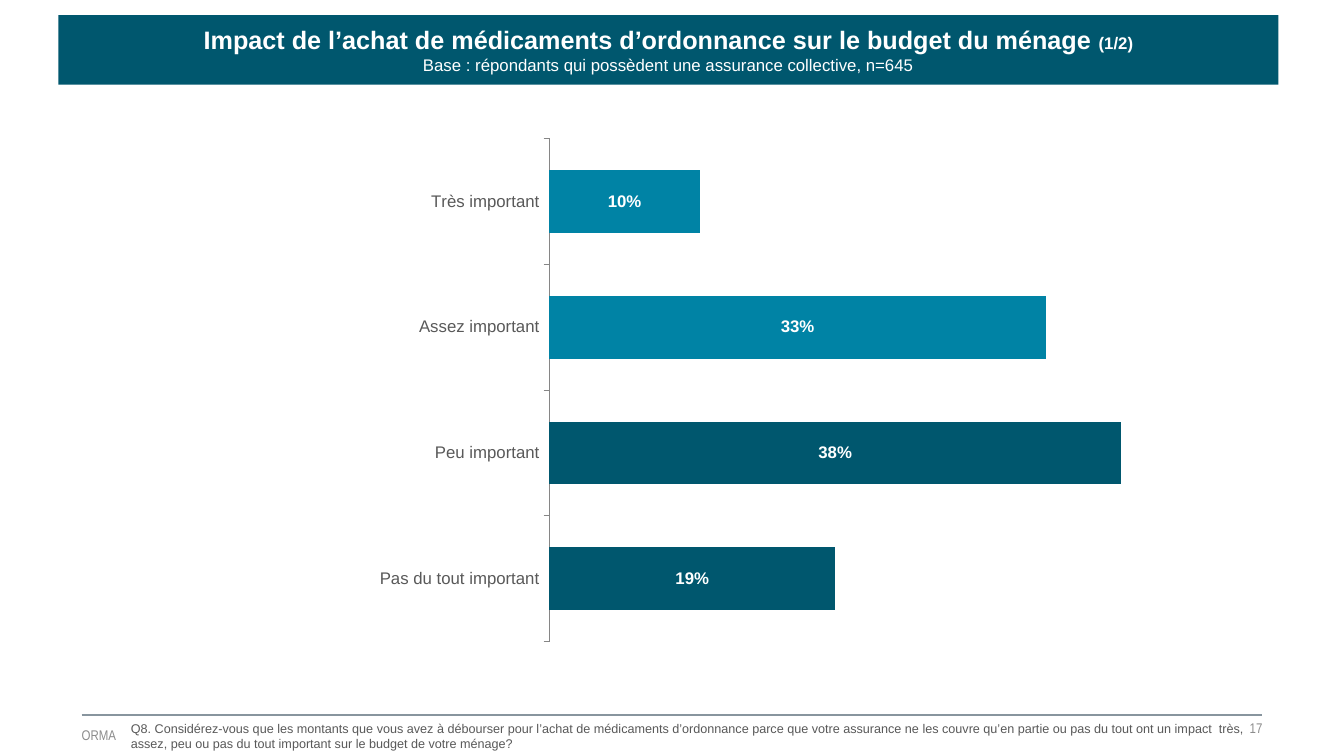
from lxml import etree
from pptx import Presentation
from pptx import util as u
from pptx.chart.data import CategoryChartData
from pptx.dml.color import RGBColor
from pptx.enum import chart as ch, shapes, text
from pptx.oxml import parse_xml
from pptx.oxml.ns import nsdecls, qn

DARK_TEAL = RGBColor(0x00, 0x57, 0x6E)
LIGHT_TEAL = RGBColor(0x00, 0x83, 0xA5)
WHITE = RGBColor(0xFF, 0xFF, 0xFF)
TEXT_GREY = RGBColor(0x59, 0x59, 0x59)
FOOTER_GREY = RGBColor(0x8C, 0x8C, 0x8C)
RULE_GREY = RGBColor(0x88, 0x95, 0x9E)
AXIS_GREY = RGBColor(0x86, 0x86, 0x86)


def format_font(font, size, color, name="Arial", bold=False):
    values = {"size": u.Pt(size), "name": name, "bold": bold}
    for attribute, value in values.items():
        setattr(font, attribute, value)
    font.color.rgb = color


def format_frame(frame, inset):
    values = {"word_wrap": True, "auto_size": text.MSO_AUTO_SIZE.NONE}
    if inset is not None:
        values["vertical_anchor"] = text.MSO_ANCHOR.MIDDLE
        for side in ("left", "top", "right", "bottom"):
            values[f"margin_{side}"] = u.Inches(inset)
    for attribute, value in values.items():
        setattr(frame, attribute, value)


presentation = Presentation()
presentation.slide_width = u.Inches(13.33)
presentation.slide_height = u.Inches(7.5)
slide = presentation.slides.add_slide(presentation.slide_layouts[5])

title = slide.shapes.title
title_place = {"left": 0.58, "top": 0.15, "width": 12.1, "height": 0.69}
for attribute, value in title_place.items():
    setattr(title, attribute, u.Inches(value))
title.fill.solid()
title.fill.fore_color.rgb = DARK_TEAL
format_frame(title.text_frame, 0)
paragraph = title.text_frame.paragraphs[0]
paragraph.alignment = text.PP_ALIGN.CENTER
title_runs = [
    ("Impact de l’achat de médicaments d’ordonnance sur le budget du ménage ", 18, True),
    ("(1/2)", 12, True),
    ("Base : répondants qui possèdent une assurance collective, n=645", 12, False),
]
for wording, size, bold in title_runs:
    if not bold:
        paragraph.add_line_break()
    run = paragraph.add_run()
    run.text = wording
    format_font(run.font, size, WHITE, bold=bold)

answers = {
    "Très important": (0.10, LIGHT_TEAL),
    "Assez important": (0.33, LIGHT_TEAL),
    "Peu important": (0.38, DARK_TEAL),
    "Pas du tout important": (0.19, DARK_TEAL),
}
chart_data = CategoryChartData(number_format="0%")
chart_data.categories = list(answers)
chart_data.add_series("Series 1", [share for share, color in answers.values()])
chart = slide.shapes.add_chart(
    ch.XL_CHART_TYPE.BAR_CLUSTERED,
    u.Inches(1.67), u.Inches(1.22), u.Inches(10.83), u.Inches(5.5), chart_data,
).chart
chart.has_legend = False
chart.has_title = False
format_font(chart.font, 12, TEXT_GREY)

category_axis = chart.category_axis
category_axis.reverse_order = True
category_axis.has_major_gridlines = False
category_axis.major_tick_mark = ch.XL_TICK_MARK.OUTSIDE
category_axis.format.line.color.rgb = AXIS_GREY
category_axis.format.line.width = u.Pt(0.75)
format_font(category_axis.tick_labels.font, 12, TEXT_GREY)

value_axis = chart.value_axis
value_axis.minimum_scale = 0
value_axis.maximum_scale = 0.4
value_axis.has_major_gridlines = False
value_axis.visible = False

plot = chart.plots[0]
plot.gap_width = 100
plot.vary_by_categories = False
series = plot.series[0]
series.format.fill.solid()
series.format.fill.fore_color.rgb = DARK_TEAL
for index, (share, color) in enumerate(answers.values()):
    if color != DARK_TEAL:
        fill = series.points[index].format.fill
        fill.solid()
        fill.fore_color.rgb = color
labels = series.data_labels
labels.show_value = True
labels.number_format = "0%"
labels.number_format_is_linked = False
labels.position = ch.XL_LABEL_POSITION.CENTER
format_font(labels.font, 12, WHITE, bold=True)

plot_area = chart.element.find(".//" + qn("c:plotArea"))
for layout in plot_area.findall(qn("c:layout")):
    plot_area.remove(layout)
layout = parse_xml(f"<c:layout {nsdecls('c')}><c:manualLayout/></c:layout>")
layout_values = {
    "layoutTarget": "inner", "xMode": "edge", "yMode": "edge",
    "x": 0.349, "y": 0.028, "w": 0.551, "h": 0.908,
}
for tag, value in layout_values.items():
    etree.SubElement(layout[0], qn(f"c:{tag}")).set("val", str(value))
plot_area.insert(0, layout)

footer_rule = slide.shapes.add_connector(
    shapes.MSO_CONNECTOR.STRAIGHT,
    u.Inches(0.81), u.Inches(7.09), u.Inches(12.52), u.Inches(7.09),
)
footer_rule.line.color.rgb = RULE_GREY
footer_rule.line.width = u.Pt(1.5)
etree.SubElement(footer_rule.element.spPr, qn("a:effectLst"))

question = (
    "Q8. Considérez-vous que les montants que vous avez à débourser pour l’achat de "
    "médicaments d’ordonnance parce que votre assurance ne les couvre qu’en partie ou pas "
    "du tout ont un impact  très, assez, peu ou pas du tout important sur le budget de "
    "votre ménage?"
)
left, right = text.PP_ALIGN.LEFT, text.PP_ALIGN.RIGHT
footers = [
    ("17", (8.73, 7.09, 3.79, 0.26), right, 0, (10, FOOTER_GREY, "Arial Narrow")),
    ("ORMA", (0.81, 7.16, 3.73, 0.26), left, 0, (10, FOOTER_GREY, "Arial Narrow")),
    (question, (1.2, 7.1, 11.3, 0.4), left, None, (9, TEXT_GREY, "Arial")),
]
for wording, place, alignment, inset, font_values in footers:
    frame = slide.shapes.add_textbox(*map(u.Inches, place)).text_frame
    format_frame(frame, inset)
    paragraph = frame.paragraphs[0]
    paragraph.alignment = alignment
    run = paragraph.add_run()
    run.text = wording
    format_font(run.font, *font_values)

presentation.save("out.pptx")
